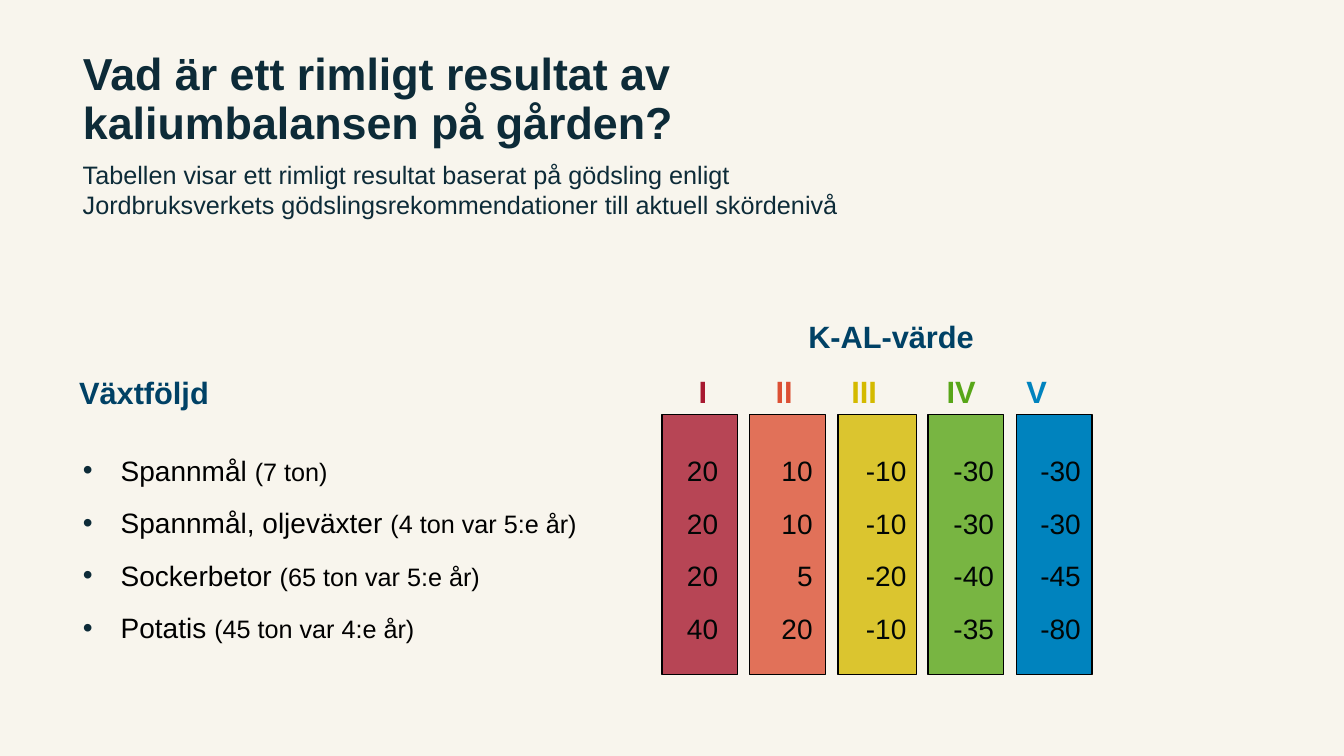
from lxml.etree import SubElement
from pptx import Presentation
from pptx.dml.color import RGBColor
from pptx.enum.shapes import MSO_SHAPE as Shape
from pptx.enum.text import MSO_ANCHOR as Anchor, MSO_AUTO_SIZE as AutoSize, PP_ALIGN as Align
from pptx.oxml.ns import qn
from pptx.util import Pt

CREAM = RGBColor(0xF8, 0xF5, 0xED)
DARK = RGBColor(0x0D, 0x2B, 0x38)
NAVY = RGBColor(0x00, 0x41, 0x65)
BLACK = RGBColor(0x00, 0x00, 0x00)
INK = RGBColor(0x01, 0x06, 0x05)
RED = RGBColor(0xA7, 0x19, 0x30)
ORANGE = RGBColor(0xDC, 0x50, 0x34)
YELLOW = RGBColor(0xD4, 0xBA, 0x00)
GREEN = RGBColor(0x58, 0xA6, 0x18)
BLUE = RGBColor(0x00, 0x83, 0xBE)

TITLE = "Vad är ett rimligt resultat av kaliumbalansen på gården?"
SUBTITLE = ("Tabellen visar ett rimligt resultat baserat på gödsling enligt "
            "Jordbruksverkets gödslingsrekommendationer till aktuell skördenivå")
CROPS = [
    ("Spannmål ", "(7 ton)"),
    ("Spannmål, oljeväxter ", "(4 ton var 5:e år)"),
    ("Sockerbetor ", "(65 ton var 5:e år)"),
    ("Potatis ", "(45 ton var 4:e år)"),
]
CLASSES = [
    ("I", RED, 80, 0, 54, 14, (20, 20, 20, 40)),
    ("II", ORANGE, 80, 62.5, 54, 9, (10, 10, 5, 20)),
    ("III", YELLOW, 80, 125.5, 56, 7, (-10, -10, -20, -10)),
    ("IV", GREEN, 80, 190, 54, 7, (-30, -30, -40, -35)),
    ("V", BLUE, 100, 253, 54, 8, (-30, -30, -45, -80)),
]
CLASS_TABS = (55, 109, 177, 234)
ROW_GAP = 1.6


def place(shape, left, top, width, height):
    shape.left, shape.top = Pt(left), Pt(top)
    shape.width, shape.height = Pt(width), Pt(height)


def set_font(font, size, color, bold=False):
    font.name = "Arial"
    font.size = Pt(size)
    font.bold = bold
    font.color.rgb = color


def add_text_box(slide, box):
    text_frame = slide.shapes.add_textbox(*map(Pt, box)).text_frame
    text_frame.word_wrap = True
    return text_frame


def fill_title(slide, box):
    title = slide.shapes.title
    place(title, *box)
    text_frame = title.text_frame
    text_frame.text = TITLE
    text_frame.word_wrap = True
    text_frame.auto_size = AutoSize.NONE
    text_frame.vertical_anchor = Anchor.BOTTOM
    paragraph = text_frame.paragraphs[0]
    paragraph.alignment = Align.LEFT
    paragraph.line_spacing = 0.9
    set_font(paragraph.font, 32, DARK, True)


def add_subtitle(slide, box):
    text_frame = add_text_box(slide, box)
    text_frame.text = SUBTITLE
    set_font(text_frame.paragraphs[0].font, 18, DARK)


def add_rotation_heading(slide, box):
    text_frame = add_text_box(slide, box)
    text_frame.margin_left = Pt(25.5)
    text_frame.text = "Växtföljd"
    paragraph = text_frame.paragraphs[0]
    paragraph.line_spacing = 1.5
    set_font(paragraph.font, 22, NAVY, True)


def add_class_headings(slide, box):
    text_frame = add_text_box(slide, box)
    text_frame.text = "K-AL-värde"
    heading = text_frame.paragraphs[0]
    heading.alignment = Align.CENTER
    heading.line_spacing = 1.5
    set_font(heading.font, 22, NAVY, True)

    numerals = text_frame.add_paragraph()
    numerals.line_spacing = 1.5
    properties = numerals._p.get_or_add_pPr()
    tabs = SubElement(properties, qn("a:tabLst"))
    for position in CLASS_TABS:
        SubElement(tabs, qn("a:tab"), pos=str(Pt(position)), algn="l")
    for index, (name, color, *_) in enumerate(CLASSES):
        run = numerals.add_run()
        run.text = "\t" + name if index else name
        set_font(run.font, 22, color, True)


def add_class_columns(slide, box):
    left, top, height = box
    for _, color, opacity, offset, width, margin, values in CLASSES:
        column = slide.shapes.add_shape(
            Shape.RECTANGLE, Pt(left + offset), Pt(top), Pt(width), Pt(height))
        column.shadow.inherit = False
        column.fill.solid()
        column.fill.fore_color.rgb = color
        if opacity < 100:
            fill_color = column._element.spPr.find(qn("a:solidFill"))[0]
            SubElement(fill_color, qn("a:alpha"), val=str(opacity * 1000))
        column.line.color.rgb = BLACK
        column.line.width = Pt(1)

        text_frame = column.text_frame
        text_frame.vertical_anchor = Anchor.TOP
        text_frame.margin_left = 0
        text_frame.margin_right = Pt(margin)
        text_frame.margin_top = Pt(16)
        text_frame.text = "\n".join(map(str, values))
        for index, paragraph in enumerate(text_frame.paragraphs):
            paragraph.alignment = Align.RIGHT
            paragraph.line_spacing = 1.5
            paragraph.space_before = Pt(ROW_GAP if index else 0)
            set_font(paragraph.font, 20, INK)


def add_bullet(paragraph):
    properties = paragraph._p.get_or_add_pPr()
    properties.set("marL", str(Pt(27)))
    properties.set("indent", str(Pt(-27)))
    bullet_color = SubElement(properties, qn("a:buClr"))
    SubElement(bullet_color, qn("a:srgbClr"), val=str(DARK))
    SubElement(properties, qn("a:buFont"), typeface="Arial")
    SubElement(properties, qn("a:buChar"), char="•")


def fill_crops(slide, box):
    body = slide.placeholders[1]
    place(body, *box)
    text_frame = body.text_frame
    text_frame.word_wrap = True
    text_frame.auto_size = AutoSize.NONE
    text_frame.vertical_anchor = Anchor.TOP
    for index, crop in enumerate(CROPS):
        paragraph = text_frame.add_paragraph() if index else text_frame.paragraphs[0]
        add_bullet(paragraph)
        paragraph.line_spacing = 1.5
        paragraph.space_before = Pt(ROW_GAP if index else 0)
        for text, size in zip(crop, (20, 18)):
            run = paragraph.add_run()
            run.text = text
            set_font(run.font, size, BLACK)


def main():
    presentation = Presentation()
    presentation.slide_width, presentation.slide_height = Pt(960), Pt(540)
    slide = presentation.slides.add_slide(presentation.slide_layouts[1])
    slide.background.fill.solid()
    slide.background.fill.fore_color.rgb = CREAM
    fill_title(slide, (52, 19, 652, 91))
    add_subtitle(slide, (52, 110, 613, 51))
    add_rotation_heading(slide, (31, 250, 202, 42))
    add_class_headings(slide, (492, 210, 289, 82))
    add_class_columns(slide, (473, 296, 186))
    fill_crops(slide, (52, 308, 788, 186))
    presentation.save("out.pptx")


if __name__ == "__main__":
    main()
